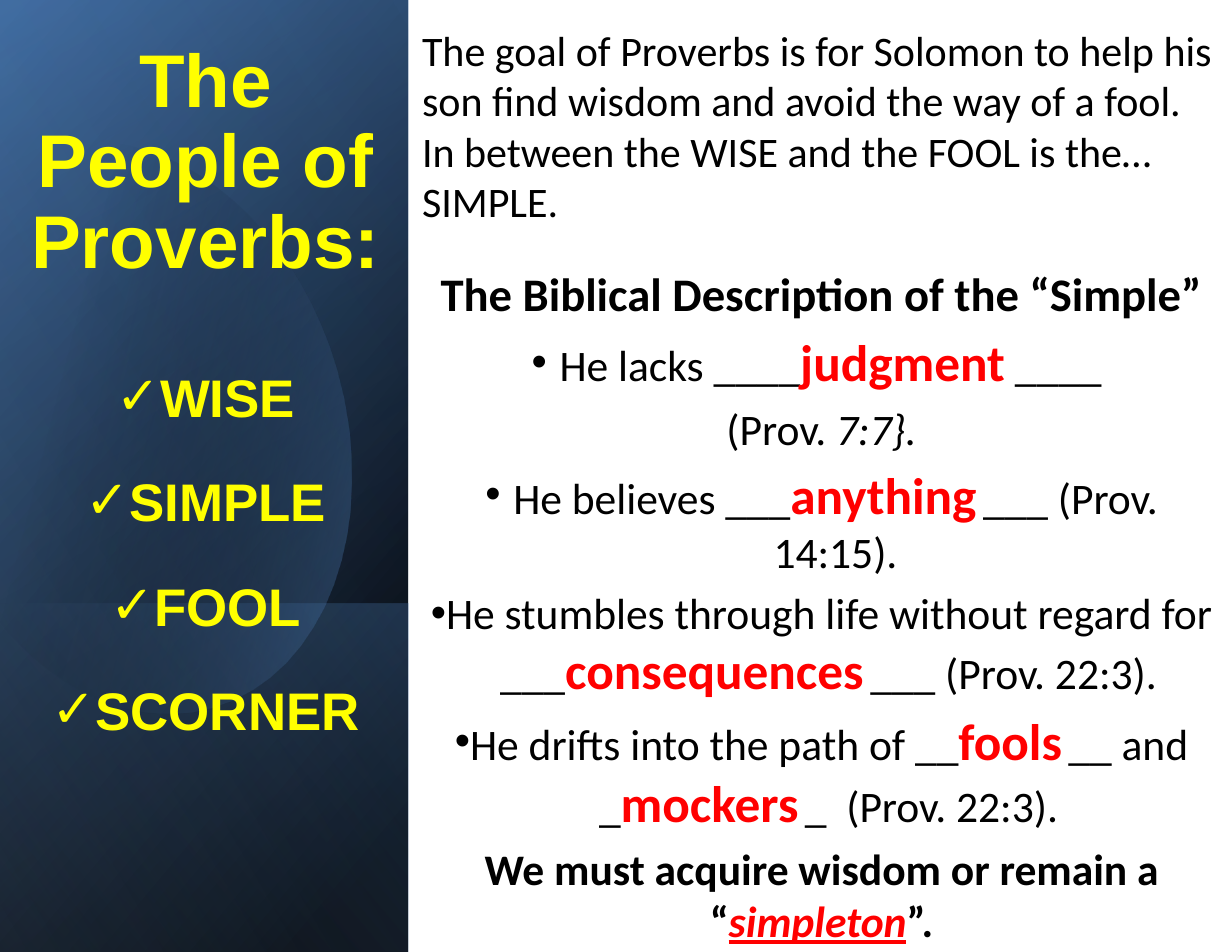
from pptx import Presentation
from pptx.dml.color import RGBColor
from pptx.enum.shapes import MSO_SHAPE
from pptx.enum.text import PP_ALIGN
from pptx.oxml import parse_xml
from pptx.oxml.ns import nsdecls, qn
from pptx.util import Emu, Pt

PX_PER_INCH = 112
COLORS = {
    "white": "FFFFFF", "black": "000000", "yellow": "FFFF00", "red": "FF0000",
    "navy": "376092", "blue": "4F81BD", "pale": "95B3D7",
}


def px(n):
    return Emu(round(n * 914400 / PX_PER_INCH))


def rgb(name):
    return RGBColor.from_string(COLORS[name])


def plain(sp):
    sp.shadow.inherit = False
    sp.line.fill.background()
    return sp


def fill_gradient(sp, stops, angle):
    """Each stop is (position %, colour name, opacity %)."""
    gs = "".join(
        f'<a:gs pos="{pos * 1000}"><a:srgbClr val="{COLORS[color]}">'
        f'<a:alpha val="{alpha * 1000}"/></a:srgbClr></a:gs>'
        for pos, color, alpha in stops)
    grad = parse_xml(
        f'<a:gradFill {nsdecls("a")} rotWithShape="1"><a:gsLst>{gs}</a:gsLst>'
        f'<a:lin ang="{angle * 60000}" scaled="0"/></a:gradFill>')
    sp.fill.background()
    spPr = sp._element.spPr
    spPr.replace(spPr.find(qn("a:noFill")), grad)


def add_turned_rect(slide, x, y, w, h, stops, angle):
    """Covers the given box with a mirrored rectangle turned by 90 degrees."""
    left, top = x + (w - h) / 2, y + (h - w) / 2
    sp = plain(slide.shapes.add_shape(
        MSO_SHAPE.RECTANGLE, px(left), px(top), px(h), px(w)))
    sp.rotation = 90
    sp._element.spPr.find(qn("a:xfrm")).set("flipH", "1")
    fill_gradient(sp, stops, angle)


def bezier(p0, p1, p2, p3, steps=16):
    for i in range(1, steps + 1):
        t = i / steps
        u = 1 - t
        yield tuple(round(u**3 * a + 3 * u * u * t * b + 3 * u * t * t * c + t**3 * d, 1)
                    for a, b, c, d in zip(p0, p1, p2, p3))


def add_glow(slide, x, y):
    """Tilted oval with its left side cut off."""
    segments = [
        [(209, 157), (300, 245), (336, 370)],
        [(380, 524), (325, 675), (213, 707)],
        [(143, 728), (67, 697), (9, 633)],
        [(-3, 618)], [(-34, 209)], [(-20, 195)],
        [(0, 174), (25, 158), (53, 150)],
        [(74, 143), (95, 142), (116, 144)],
    ]
    points = [(116, 144)]
    for seg in segments:
        points.extend(bezier(points[-1], *seg) if len(seg) == 3 else seg)
    points = [(px(x + a), px(y + b)) for a, b in points]
    builder = slide.shapes.build_freeform(*points[0], scale=1.0)
    builder.add_line_segments(points[1:], close=True)
    sp = plain(builder.convert_to_shape())
    fill_gradient(sp, [(29, "black", 0), (100, "blue", 43)], 14)


def add_text_box(slide, x, y, w, h):
    tf = slide.shapes.add_textbox(px(x), px(y), px(w), px(h)).text_frame
    tf.word_wrap = True
    return tf


def add_paragraph(tf, align=PP_ALIGN.CENTER, before=None, spacing=None,
                  bullet=None, indent=0):
    p = tf.add_paragraph() if tf.paragraphs[0].runs else tf.paragraphs[0]
    if bullet:
        pPr = p._p.get_or_add_pPr()
        pPr.set("marL", str(px(indent)))
        pPr.set("indent", str(-px(indent)))
        pPr.append(parse_xml(f'<a:buFont {nsdecls("a")} typeface="Arial"/>'))
        pPr.append(parse_xml(f'<a:buChar {nsdecls("a")} char="{bullet}"/>'))
    p.alignment = align
    p.space_after = Pt(6)
    if before:
        p.space_before = Pt(before)
    if spacing:
        p.line_spacing = spacing
    return p


def add_run(p, text, size=28, font="Calibri", color="black",
            bold=False, italic=False, underline=False):
    r = p.add_run()
    r.text = text
    f = r.font
    f.size, f.name, f.color.rgb = Pt(size), font, rgb(color)
    f.bold, f.italic, f.underline = bold, italic, underline


def add_answer(p, text, gap=True):
    add_run(p, text, size=33, color="red", bold=True)
    if gap:
        add_run(p, " ", size=18, font="Cabin")


def add_panel(slide, x, y, w, h):
    add_turned_rect(slide, x, y, w, h, [(8, "black", 100), (100, "navy", 100)], 50)
    add_turned_rect(slide, x, y, w, h, [(0, "black", 0), (99, "blue", 46)], 30)
    add_turned_rect(slide, x, y + h - 348, w, 348,
                    [(2, "blue", 29), (100, "black", 30)], 130)
    add_glow(slide, x, y)
    add_turned_rect(slide, x, y, w, h, [(0, "black", 0), (99, "pale", 11)], 120)


def add_people(slide, x, y, w, h):
    tf = add_text_box(slide, x, y, w, h)
    style = dict(font="Arial", color="yellow", bold=True)
    add_run(add_paragraph(tf, spacing=0.9), "The People of Proverbs:", size=48, **style)
    for i, person in enumerate(["WISE", "SIMPLE", "FOOL", "SCORNER"]):
        p = add_paragraph(tf, before=25 if i == 0 else None, spacing=1.5,
                          bullet="✓", indent=14)
        add_run(p, person, size=34, **style)


def add_lesson(slide, x, y, w, h):
    tf = add_text_box(slide, x, y, w, h)
    add_run(add_paragraph(tf, align=PP_ALIGN.LEFT),
            "The goal of Proverbs is for Solomon to help his son find wisdom and "
            "avoid the way of a fool. In between the WISE and the FOOL is the… SIMPLE.",
            size=27)
    add_run(add_paragraph(tf, before=19),
            "The Biblical Description of the “Simple”", size=30, bold=True)

    p = add_paragraph(tf, bullet="•", indent=28)
    add_run(p, "He lacks ____")
    add_answer(p, "judgment", gap=False)
    add_run(p, " ____ ")
    p = add_paragraph(tf)
    add_run(p, "(Prov. ")
    add_run(p, "7:7}.", italic=True)

    points = [
        (28, [("He believes ___", "anything")], "___ (Prov. 14:15)."),
        (14, [("He stumbles through life without regard for ___", "consequences")],
         "___ (Prov. 22:3)."),
        (14, [("He drifts into the path of __", "fools"), ("__ and _", "mockers")],
         "_  (Prov. 22:3)."),
    ]
    for indent, blanks, ending in points:
        p = add_paragraph(tf, bullet="•", indent=indent)
        for lead, answer in blanks:
            add_run(p, lead)
            add_answer(p, answer)
        add_run(p, ending)

    p = add_paragraph(tf)
    add_run(p, "We must acquire wisdom or remain a “", bold=True)
    add_run(p, "simpleton", color="red", bold=True, italic=True, underline=True)
    add_run(p, "”.", bold=True)


def main():
    prs = Presentation()
    prs.slide_width, prs.slide_height = px(1232), px(952)
    slide = prs.slides.add_slide(prs.slide_layouts[6])
    backdrop = plain(slide.shapes.add_shape(
        MSO_SHAPE.RECTANGLE, 0, 0, prs.slide_width, prs.slide_height))
    backdrop.fill.solid()
    backdrop.fill.fore_color.rgb = rgb("white")
    add_panel(slide, 0, 0, 408, 952)
    add_lesson(slide, 411, 19, 821, 896)
    add_people(slide, 19, 37, 373, 809)
    prs.save("out.pptx")


if __name__ == "__main__":
    main()
